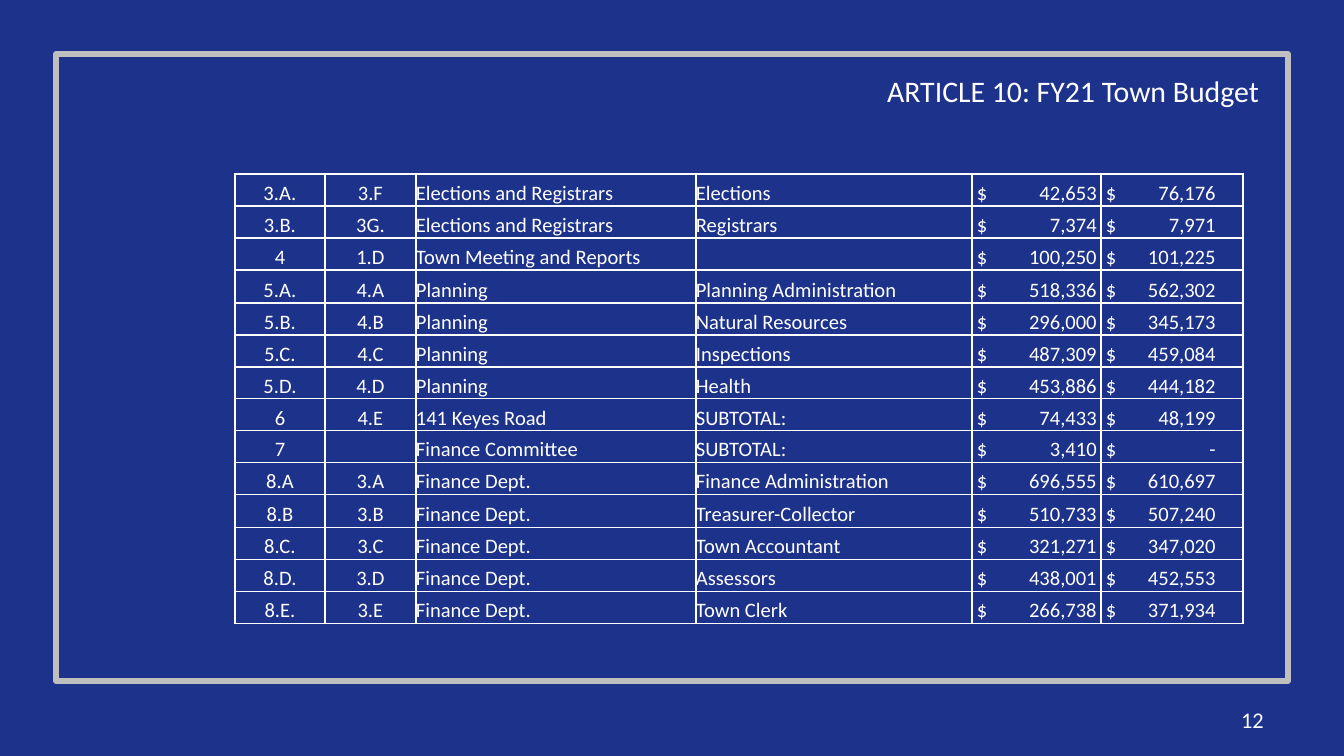
from typing import NamedTuple

import pptx
import pptx.dml.color
import pptx.enum.shapes
import pptx.enum.text
import pptx.util
from lxml import etree
from pptx.oxml.ns import qn

EMU_PER_PX = 914400 / 134.4
FONT = "Calibri"
WHITE, NAVY, SILVER = "FFFFFF", "1D328B", "BFBFBF"
ALIGN = pptx.enum.text.PP_ALIGN
ANCHOR = pptx.enum.text.MSO_ANCHOR


class Box(NamedTuple):
    left: int
    top: int
    width: int
    height: int


class Column(NamedTuple):
    width: int
    align: ALIGN = ALIGN.LEFT
    amount_stop: int = 0  # right tab stop of the amounts, 0 for plain text


class BudgetLine(NamedTuple):
    old_item: str
    new_item: str
    department: str
    division: str
    before: str
    after: str


FRAME = Box(56, 54, 1232, 627)
TITLE = Box(874, 66, 403, 50)
PAGE_NUMBER = Box(964, 700, 313, 40)
TABLE = Box(235, 174, 1008, 450)
AMOUNT_INSET = 5

COLUMNS = [
    Column(90, ALIGN.CENTER),
    Column(91, ALIGN.CENTER),
    Column(280),
    Column(276),
    Column(129, amount_stop=120),
    Column(142, amount_stop=110),
]

BUDGET = [
    BudgetLine("3.A.", "3.F", "Elections and Registrars", "Elections", "42,653", "76,176"),
    BudgetLine("3.B.", "3G.", "Elections and Registrars", "Registrars", "7,374", "7,971"),
    BudgetLine("4", "1.D", "Town Meeting and Reports", "", "100,250", "101,225"),
    BudgetLine("5.A.", "4.A", "Planning", "Planning Administration", "518,336", "562,302"),
    BudgetLine("5.B.", "4.B", "Planning", "Natural Resources", "296,000", "345,173"),
    BudgetLine("5.C.", "4.C", "Planning", "Inspections", "487,309", "459,084"),
    BudgetLine("5.D.", "4.D", "Planning", "Health", "453,886", "444,182"),
    BudgetLine("6", "4.E", "141 Keyes Road", "SUBTOTAL:", "74,433", "48,199"),
    BudgetLine("7", "", "Finance Committee", "SUBTOTAL:", "3,410", "-"),
    BudgetLine("8.A", "3.A", "Finance Dept.", "Finance Administration", "696,555", "610,697"),
    BudgetLine("8.B", "3.B", "Finance Dept.", "Treasurer-Collector", "510,733", "507,240"),
    BudgetLine("8.C.", "3.C", "Finance Dept.", "Town Accountant", "321,271", "347,020"),
    BudgetLine("8.D.", "3.D", "Finance Dept.", "Assessors", "438,001", "452,553"),
    BudgetLine("8.E.", "3.E", "Finance Dept.", "Town Clerk", "266,738", "371,934"),
]


def px(length: int) -> pptx.util.Emu:
    return pptx.util.Emu(round(length * EMU_PER_PX))


def place(box: Box) -> list:
    return [px(length) for length in box]


def color(value: str) -> pptx.dml.color.RGBColor:
    return pptx.dml.color.RGBColor.from_string(value)


def format_text(para, size: int, align: ALIGN) -> None:
    para.alignment = align
    for span in para.runs:
        span.font.name = FONT
        span.font.size = pptx.util.Pt(size)
        span.font.color.rgb = color(WHITE)


def add_label(page, box: Box, text: str, size: int, align: ALIGN, anchor: ANCHOR) -> None:
    frame = page.shapes.add_textbox(*place(box)).text_frame
    frame.word_wrap = True
    frame.vertical_anchor = anchor
    frame.text = text
    format_text(frame.paragraphs[0], size, align)


def add_frame(page, box: Box) -> None:
    frame = page.shapes.add_shape(pptx.enum.shapes.MSO_SHAPE.RECTANGLE, *place(box))
    frame.shadow.inherit = False
    frame.fill.background()
    frame.line.color.rgb = color(SILVER)
    frame.line.width = pptx.util.Pt(3)


def add_borders(cell) -> None:
    properties = cell._tc.get_or_add_tcPr()
    for index, side in enumerate(("a:lnL", "a:lnR", "a:lnT", "a:lnB")):
        line = etree.Element(qn(side), w=str(pptx.util.Pt(1)))
        fill = etree.SubElement(line, qn("a:solidFill"))
        etree.SubElement(fill, qn("a:srgbClr"), val=WHITE)
        properties.insert(index, line)


def fill_cell(cell, text: str, column: Column) -> None:
    cell.margin_left = px(AMOUNT_INSET if column.amount_stop else 0)
    cell.margin_right = cell.margin_top = cell.margin_bottom = 0
    cell.vertical_anchor = ANCHOR.BOTTOM
    cell.fill.background()
    add_borders(cell)
    para = cell.text_frame.paragraphs[0]
    if column.amount_stop:
        stops = etree.SubElement(para._p.get_or_add_pPr(), qn("a:tabLst"))
        etree.SubElement(stops, qn("a:tab"), pos=str(px(column.amount_stop)), algn="r")
        text = f"$\t{text}"
    if text:
        para.text = text
    else:
        # Keeps an empty cell from stretching its row
        etree.SubElement(para._p, qn("a:endParaRPr"), sz="1100")
    format_text(para, 11, column.align)


def add_budget_table(page, box: Box) -> None:
    table = page.shapes.add_table(len(BUDGET), len(COLUMNS), *place(box)).table
    table.first_row = table.horz_banding = False
    for index, column in enumerate(COLUMNS):
        table.columns[index].width = px(column.width)
    edges = [round(box.height * i / len(BUDGET)) for i in range(len(BUDGET) + 1)]
    for row, line in enumerate(BUDGET):
        table.rows[row].height = px(edges[row + 1] - edges[row])
        for index, (text, column) in enumerate(zip(line, COLUMNS)):
            fill_cell(table.cell(row, index), text, column)


def main() -> None:
    deck = pptx.Presentation()
    deck.slide_width, deck.slide_height = px(1344), px(756)
    page = deck.slides.add_slide(deck.slide_layouts[6])

    # Background and frame
    page.background.fill.solid()
    page.background.fill.fore_color.rgb = color(NAVY)
    add_frame(page, FRAME)

    # Page number and title
    add_label(page, PAGE_NUMBER, "12", 12, ALIGN.RIGHT, ANCHOR.MIDDLE)
    add_label(page, TITLE, "ARTICLE 10: FY21 Town Budget", 16, ALIGN.LEFT, ANCHOR.TOP)

    # Budget lines
    add_budget_table(page, TABLE)

    deck.save("out.pptx")


if __name__ == "__main__":
    main()
